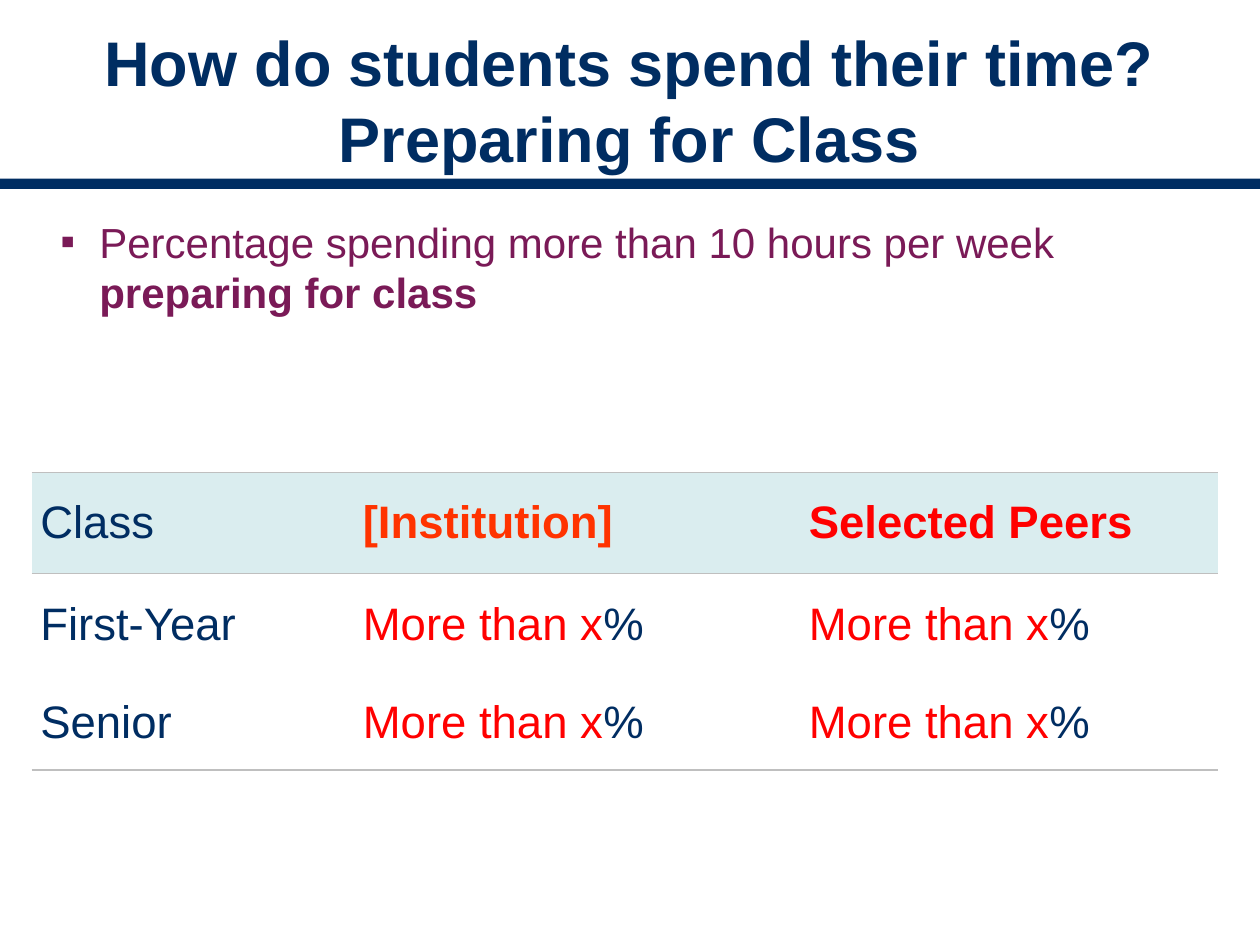
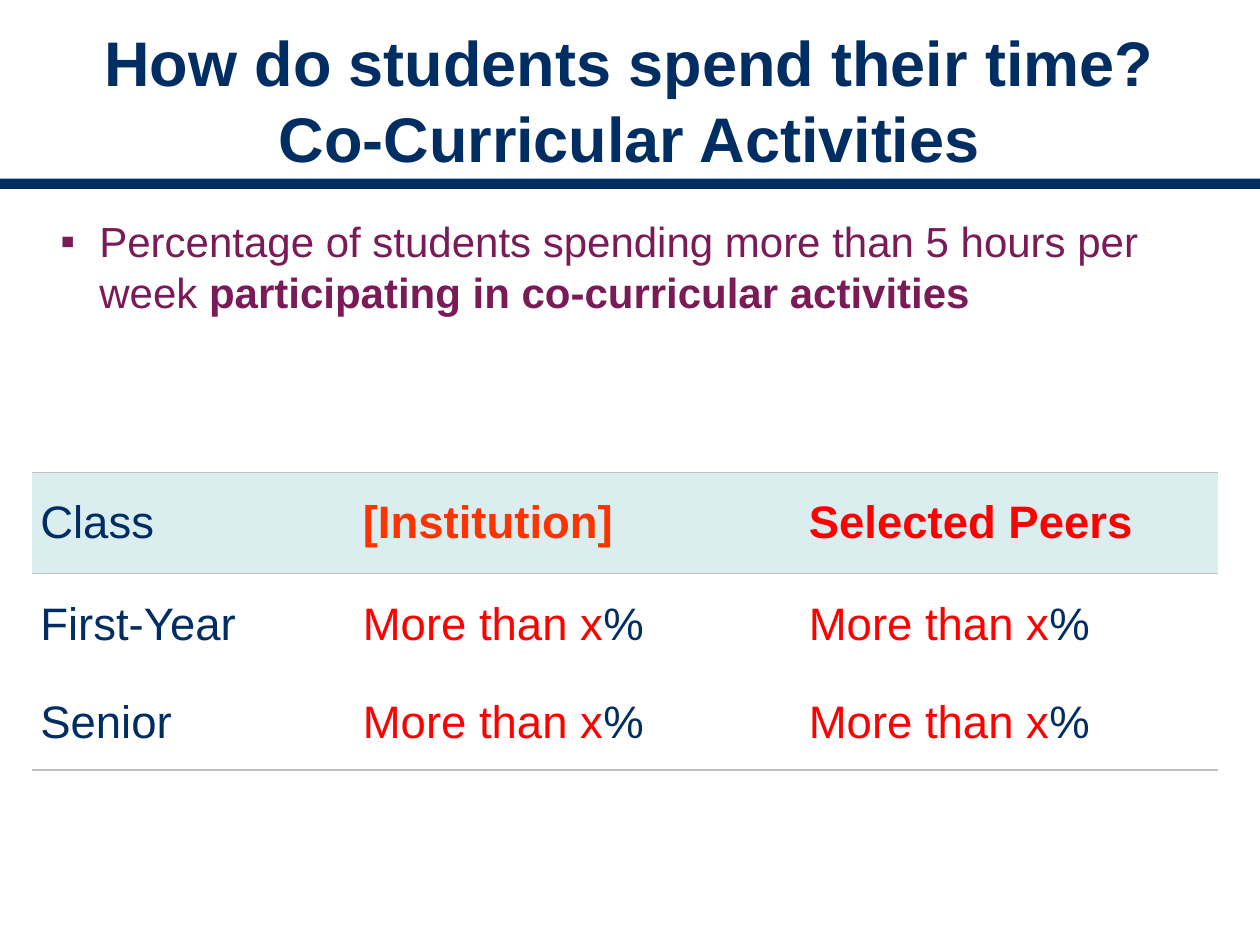
from lxml.etree import SubElement
from pptx import Presentation
from pptx.dml.color import RGBColor
from pptx.enum.shapes import MSO_SHAPE as Preset
from pptx.enum.text import MSO_ANCHOR as Anchor, MSO_AUTO_SIZE as AutoSize, PP_ALIGN as Align
from pptx.oxml import parse_xml
from pptx.oxml.ns import nsdecls, qn
from pptx.util import Emu, Inches, Pt

NAVY, PLUM, RED, ORANGE = "002D62", "7A1A57", "FF0000", "FF3300"
HEADER_FILL, RULE_COLOR = "DAEDEF", "BFBFBF"
FONT = "Arial"
WIDTH, HEIGHT = Inches(10), Inches(7.5)
LEFT, CONTENT_WIDTH = 0.025, 0.942

COLUMN_WIDTHS = [2.56, 3.54, 3.32]
ROW_HEIGHTS = [0.8, 0.82, 0.74]

# Each cell is a list of (text, color, bold) pieces
SHARE = [("More than x", RED, False), ("%", NAVY, False)]
TABLE_ROWS = [
    [[("Class", NAVY, False)], [("[Institution]", ORANGE, True)], [("Selected Peers", RED, True)]],
    [[("First-Year", NAVY, False)], SHARE, SHARE],
    [[("Senior", NAVY, False)], SHARE, SHARE],
]

# Topic, start of the bullet, bold end of the bullet, share of the height for the text
SLIDES = [
    ("Preparing for Class", "Percentage spending more than 10 hours per week ",
     "preparing for class", 0.178),
    ("Co-Curricular Activities", "Percentage of students spending more than 5 hours per week ",
     "participating in co-curricular activities", 0.278),
]


def rgb(value):
    return RGBColor.from_string(value)


def box(left, top, width, height):
    """Turn shares of the slide into lengths."""
    return (Emu(int(WIDTH * left)), Emu(int(HEIGHT * top)),
            Emu(int(WIDTH * width)), Emu(int(HEIGHT * height)))


def format_run(run, size, color, bold):
    run.font.name = FONT
    run.font.size = Pt(size)
    run.font.bold = bold
    run.font.color.rgb = rgb(color)


def write_pieces(paragraph, pieces, size):
    """Fill a paragraph with runs and give it 20% space before."""
    spacing = SubElement(paragraph._p.get_or_add_pPr(), qn("a:spcBef"))
    SubElement(spacing, qn("a:spcPct")).set("val", "20000")
    for text, color, bold in pieces:
        run = paragraph.add_run()
        run.text = text
        format_run(run, size, color, bold)


def add_band(slide):
    band = slide.shapes.add_shape(Preset.RECTANGLE, *box(0, 0.189, 1, 0.011))
    band.shadow.inherit = False
    band.fill.solid()
    band.fill.fore_color.rgb = rgb(NAVY)
    band.line.fill.background()


def set_title(slide, topic):
    title = slide.shapes.title
    title.left, title.top, title.width, title.height = box(0.033, 0.033, 0.933, 0.144)
    frame = title.text_frame
    frame.text = f"How do students spend their time?\v{topic}"
    frame.auto_size = AutoSize.NONE
    frame.vertical_anchor = Anchor.MIDDLE
    paragraph = frame.paragraphs[0]
    paragraph.alignment = Align.CENTER
    for run in paragraph.runs:
        format_run(run, 36, NAVY, True)


def add_bullet(slide, pieces, height):
    frame = slide.shapes.add_textbox(*box(LEFT, 0.222, CONTENT_WIDTH, height)).text_frame
    frame.word_wrap = True
    paragraph = frame.paragraphs[0]
    write_pieces(paragraph, pieces, 24)
    properties = paragraph._p.get_or_add_pPr()
    properties.set("marL", str(Inches(0.44)))
    properties.set("indent", str(Inches(-0.31)))
    bullet_color = SubElement(properties, qn("a:buClr"))
    SubElement(bullet_color, qn("a:srgbClr")).set("val", PLUM)
    SubElement(properties, qn("a:buFont")).set("typeface", FONT)
    SubElement(properties, qn("a:buChar")).set("char", "▪")


def set_borders(cell, ruled_sides):
    """Rule the named sides (L, R, T, B) and clear the others."""
    rule = f'<a:solidFill><a:srgbClr val="{RULE_COLOR}"/></a:solidFill>'
    for side in "LRTB":
        paint = rule if side in ruled_sides else "<a:noFill/>"
        cell._tc.get_or_add_tcPr().append(parse_xml(
            f'<a:ln{side} {nsdecls("a")} w="{Pt(1)}">{paint}</a:ln{side}>'))


def add_class_table(slide):
    frame = slide.shapes.add_table(len(ROW_HEIGHTS), len(COLUMN_WIDTHS),
                                   *box(LEFT, 0.5, CONTENT_WIDTH, 0.315))
    table = frame.table
    table.horz_banding = False
    for column, width in zip(table.columns, COLUMN_WIDTHS):
        column.width = Inches(width)
    for row, height in zip(table.rows, ROW_HEIGHTS):
        row.height = Inches(height)

    ruled_sides = ["TB", "T", "B"]
    for row_index, row in enumerate(TABLE_ROWS):
        for column_index, pieces in enumerate(row):
            cell = table.cell(row_index, column_index)
            cell.vertical_anchor = Anchor.MIDDLE
            cell.margin_left = cell.margin_right = Inches(0.07)
            cell.margin_top = cell.margin_bottom = Inches(0.05)
            set_borders(cell, ruled_sides[row_index])
            if row_index == 0:
                cell.fill.solid()
                cell.fill.fore_color.rgb = rgb(HEADER_FILL)
            else:
                cell.fill.background()
            write_pieces(cell.text_frame.paragraphs[0], pieces, 26)


def main():
    presentation = Presentation()
    presentation.slide_width, presentation.slide_height = WIDTH, HEIGHT
    title_only = presentation.slide_layouts[5]
    for topic, lead, activity, text_height in SLIDES:
        slide = presentation.slides.add_slide(title_only)
        add_band(slide)
        set_title(slide, topic)
        add_bullet(slide, [(lead, PLUM, False), (activity, PLUM, True)], text_height)
        add_class_table(slide)
    presentation.save("out.pptx")


if __name__ == "__main__":
    main()
